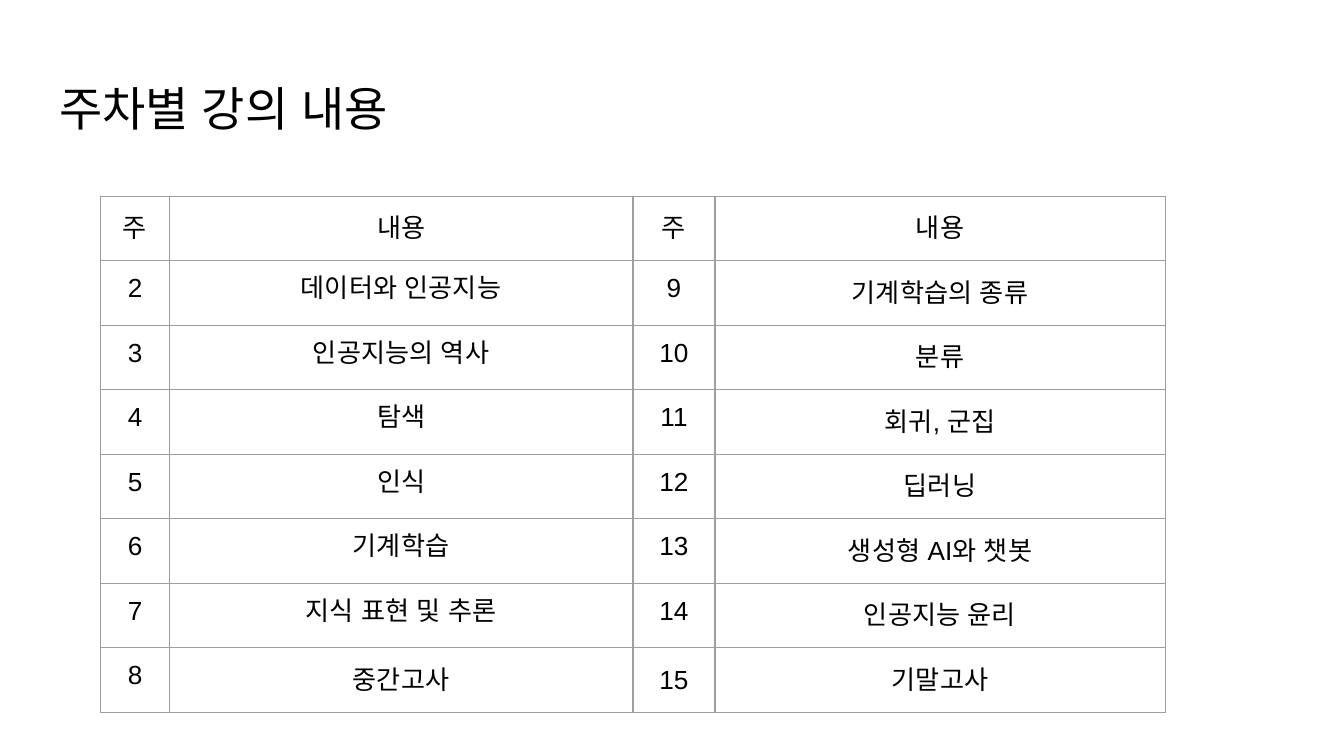
import dataclasses

import lxml.etree
import pptx
import pptx.dml.color
import pptx.enum.text
import pptx.oxml.ns
import pptx.util

Inches = pptx.util.Inches
Pt = pptx.util.Pt
RGB = pptx.dml.color.RGBColor
Align = pptx.enum.text.PP_ALIGN
Anchor = pptx.enum.text.MSO_ANCHOR
qn = pptx.oxml.ns.qn


@dataclasses.dataclass(frozen=True)
class Theme:
    font: str = "Arial"
    ink: str = "000000"
    rule: str = "9E9E9E"
    paper: str = "FFFFFF"
    title_size: float = 25.2
    body_size: float = 14
    rule_width: float = 0.75


THEME = Theme()
SLIDE_WIDTH = Inches(10)
SLIDE_HEIGHT = SLIDE_WIDTH * 9 // 16
INSET = Inches(0.1)
HEADINGS = ["주", "내용"]
FIRST_HALF = ["데이터와 인공지능", "인공지능의 역사", "탐색", "인식",
              "기계학습", "지식 표현 및 추론", "중간고사"]
SECOND_HALF = ["기계학습의 종류", "분류", "회귀, 군집", "딥러닝",
               "생성형 AI와 챗봇", "인공지능 윤리", "기말고사"]
FIRST_WEEK = 2
COLUMN_WIDTHS = [0.51, 3.45, 0.61, 3.35]
ROW_HEIGHT = 0.48


def apply_format(target, values):
    for name, value in values.items():
        setattr(target, name, value)


def write_text(paragraph, text, size, alignment):
    paragraph.alignment = alignment
    run = paragraph.add_run()
    run.text = text
    apply_format(run.font, {"name": THEME.font, "size": Pt(size), "bold": False})
    run.font.color.rgb = RGB.from_string(THEME.ink)
    latin = run._r.get_or_add_rPr().find(qn("a:latin"))
    latin.addnext(lxml.etree.Element(qn("a:ea"), typeface=THEME.font))


def set_borders(cell):
    properties = cell._tc.get_or_add_tcPr()
    for position, side in enumerate(["a:lnL", "a:lnR", "a:lnT", "a:lnB"]):
        line = lxml.etree.Element(qn(side), w=str(Pt(THEME.rule_width)))
        fill = lxml.etree.SubElement(line, qn("a:solidFill"))
        lxml.etree.SubElement(fill, qn("a:srgbClr"), val=THEME.rule)
        properties.insert(position, line)


def add_title(slide, left, top, width, height):
    title = slide.shapes.title
    apply_format(title, {"left": Inches(left), "top": Inches(top),
                         "width": Inches(width), "height": Inches(height)})
    apply_format(title.text_frame, {
        "margin_left": INSET, "margin_right": INSET,
        "margin_top": INSET, "margin_bottom": INSET,
        "word_wrap": True, "vertical_anchor": Anchor.MIDDLE,
        "auto_size": pptx.enum.text.MSO_AUTO_SIZE.NONE})
    write_text(title.text_frame.paragraphs[0], "주차별 강의 내용",
               THEME.title_size, Align.LEFT)


def schedule_rows():
    rows = [HEADINGS * 2]
    for week, (first, second) in enumerate(zip(FIRST_HALF, SECOND_HALF), FIRST_WEEK):
        rows.append([str(week), first, str(week + len(FIRST_HALF)), second])
    return rows


def add_schedule(slide, left, top):
    rows = schedule_rows()
    schedule = slide.shapes.add_table(
        len(rows), len(COLUMN_WIDTHS), Inches(left), Inches(top),
        Inches(sum(COLUMN_WIDTHS)), Inches(ROW_HEIGHT * len(rows))).table
    apply_format(schedule, {"first_row": False, "horz_banding": False})
    for column, width in zip(schedule.columns, COLUMN_WIDTHS):
        column.width = Inches(width)
    last_row, last_column = len(rows) - 1, len(COLUMN_WIDTHS) - 1
    for r, texts in enumerate(rows):
        schedule.rows[r].height = Inches(ROW_HEIGHT)
        for c, text in enumerate(texts):
            centred = r == 0 or c == last_column or (r == last_row and c > 0)
            cell = schedule.cell(r, c)
            apply_format(cell, {
                "margin_left": INSET, "margin_right": INSET,
                "margin_top": INSET, "margin_bottom": INSET,
                "vertical_anchor": Anchor.MIDDLE if centred else Anchor.TOP})
            cell.fill.solid()
            cell.fill.fore_color.rgb = RGB.from_string(THEME.paper)
            set_borders(cell)
            write_text(cell.text_frame.paragraphs[0], text,
                       THEME.body_size, Align.CENTER)


def main():
    deck = pptx.Presentation()
    apply_format(deck, {"slide_width": SLIDE_WIDTH, "slide_height": SLIDE_HEIGHT})
    slide = deck.slides.add_slide(deck.slide_layouts.get_by_name("Title Only"))
    add_title(slide, 0.34, 0.49, 9.32, 0.63)
    add_schedule(slide, 0.75, 1.46)
    deck.save("out.pptx")


if __name__ == "__main__":
    main()
